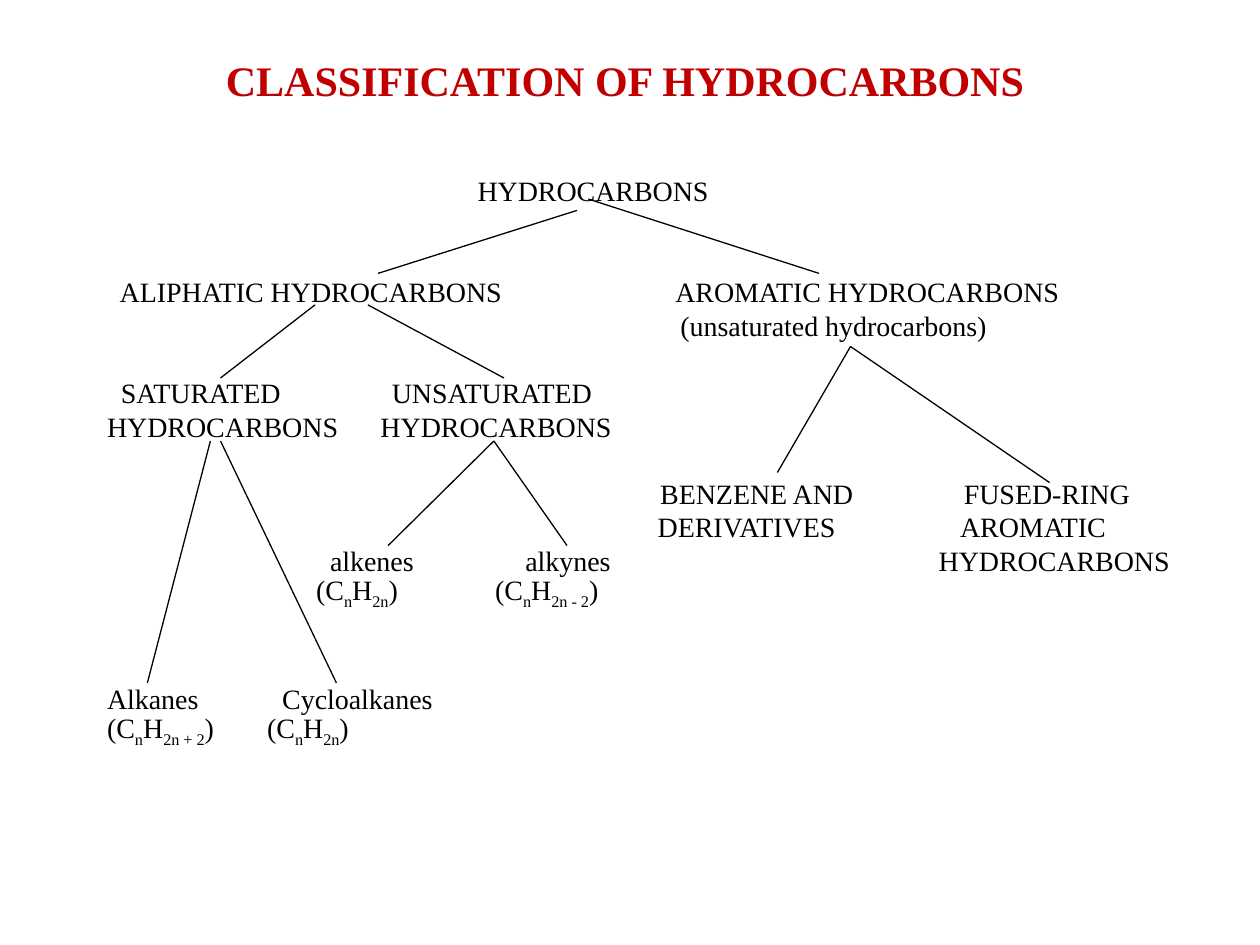
import pptx
import pptx.util
import pptx.dml.color
import pptx.enum.shapes
import pptx.enum.text
import pptx.oxml.ns
import lxml.etree

FONT = "Times New Roman"
TITLE = "CLASSIFICATION OF HYDROCARBONS"
TOP, LINE = 1.38, 19.2 / 72      # first text row and row pitch, inches

# Labels: row, left, width, then lines of (indent, text); _x_ is a subscript
LABELS = [
    (0, 3.79, 2.2, [(0, "HYDROCARBONS")]),
    (3, 0.95, 3.4, [(0, "ALIPHATIC HYDROCARBONS")]),
    (3, 5.36, 3.4, [(0, "AROMATIC HYDROCARBONS"),
                    (0.04, "(unsaturated hydrocarbons)")]),
    (6, 0.85, 2.1, [(0.11, "SATURATED"), (0, "HYDROCARBONS")]),
    (6, 3.02, 2.1, [(0.09, "UNSATURATED"), (0, "HYDROCARBONS")]),
    (9, 5.22, 2.0, [(0.02, "BENZENE AND"), (0, "DERIVATIVES")]),
    (9, 7.45, 2.1, [(0.2, "FUSED-RING"), (0.17, "AROMATIC"),
                    (0, "HYDROCARBONS")]),
    (11, 2.51, 1.2, [(0.11, "alkenes"), (0, "(C_n_H_2n_)")]),
    (11, 3.93, 1.2, [(0.24, "alkynes"), (0, "(C_n_H_2n - 2_)")]),
    (15.1, 0.85, 1.2, [(0, "Alkanes"), (0, "(C_n_H_2n + 2_)")]),
    (15.1, 2.12, 1.6, [(0.12, "Cycloalkanes"), (0, "(C_n_H_2n_)")]),
]

# Branches: start and end points, inches
BRANCHES = [
    ((4.58, 1.67), (3, 2.17)), ((4.67, 1.58), (6.5, 2.17)),
    ((2.5, 2.42), (1.75, 3)), ((2.92, 2.42), (4, 3)),
    ((6.75, 2.75), (6.17, 3.75)), ((6.75, 2.75), (8.33, 3.83)),
    ((1.67, 3.5), (1.17, 5.42)), ((1.75, 3.5), (2.67, 5.42)),
    ((3.92, 3.5), (3.08, 4.33)), ((3.92, 3.5), (4.5, 4.33)),
]


def color(value):
    return pptx.dml.color.RGBColor.from_string(value)


def inches(*values):
    return [pptx.util.Inches(value) for value in values]


def write(para, text, size=16, bold=False, fill="000000"):
    """Fill a paragraph; every second piece between underscores is lowered."""
    for index, piece in enumerate(text.split("_")):
        span = para.add_run()
        span.text = piece
        span.font.name = FONT
        span.font.size = pptx.util.Pt(size)
        span.font.bold = bold
        span.font.color.rgb = color(fill)
        if index % 2:
            span.font._element.set("baseline", "-25000")


def add_label(page, row, left, width, lines):
    box = page.shapes.add_textbox(
        *inches(left, TOP + row * LINE, width, len(lines) * LINE))
    frame = box.text_frame
    frame.word_wrap = True
    frame.margin_left = frame.margin_right = 0
    frame.margin_top = frame.margin_bottom = 0
    for index, (indent, text) in enumerate(lines):
        para = frame.add_paragraph() if index else frame.paragraphs[0]
        para.line_spacing = pptx.util.Pt(LINE * 72)
        para._p.get_or_add_pPr().set("marL", str(pptx.util.Inches(indent)))
        write(para, text)


def add_branch(page, start, end):
    line = page.shapes.add_connector(
        pptx.enum.shapes.MSO_CONNECTOR.STRAIGHT, *inches(*start, *end))
    line.line.color.rgb = color("000000")
    line.line.width = pptx.util.Pt(0.75)
    lxml.etree.SubElement(line._element.spPr,
                          pptx.oxml.ns.qn("a:effectLst"))


def main():
    deck = pptx.Presentation()
    deck.slide_width, deck.slide_height = inches(10, 7.5)
    page = deck.slides.add_slide(deck.slide_layouts[5])

    # Title
    title = page.shapes.title
    title.left, title.top, title.width, title.height = inches(1, 0.38, 7.92, 0.5)
    title.text_frame.vertical_anchor = pptx.enum.text.MSO_ANCHOR.MIDDLE
    para = title.text_frame.paragraphs[0]
    para.alignment = pptx.enum.text.PP_ALIGN.CENTER
    write(para, TITLE, size=24, bold=True, fill="C00000")

    # Tree
    for label in LABELS:
        add_label(page, *label)
    for start, end in BRANCHES:
        add_branch(page, start, end)

    deck.save("out.pptx")


if __name__ == "__main__":
    main()
